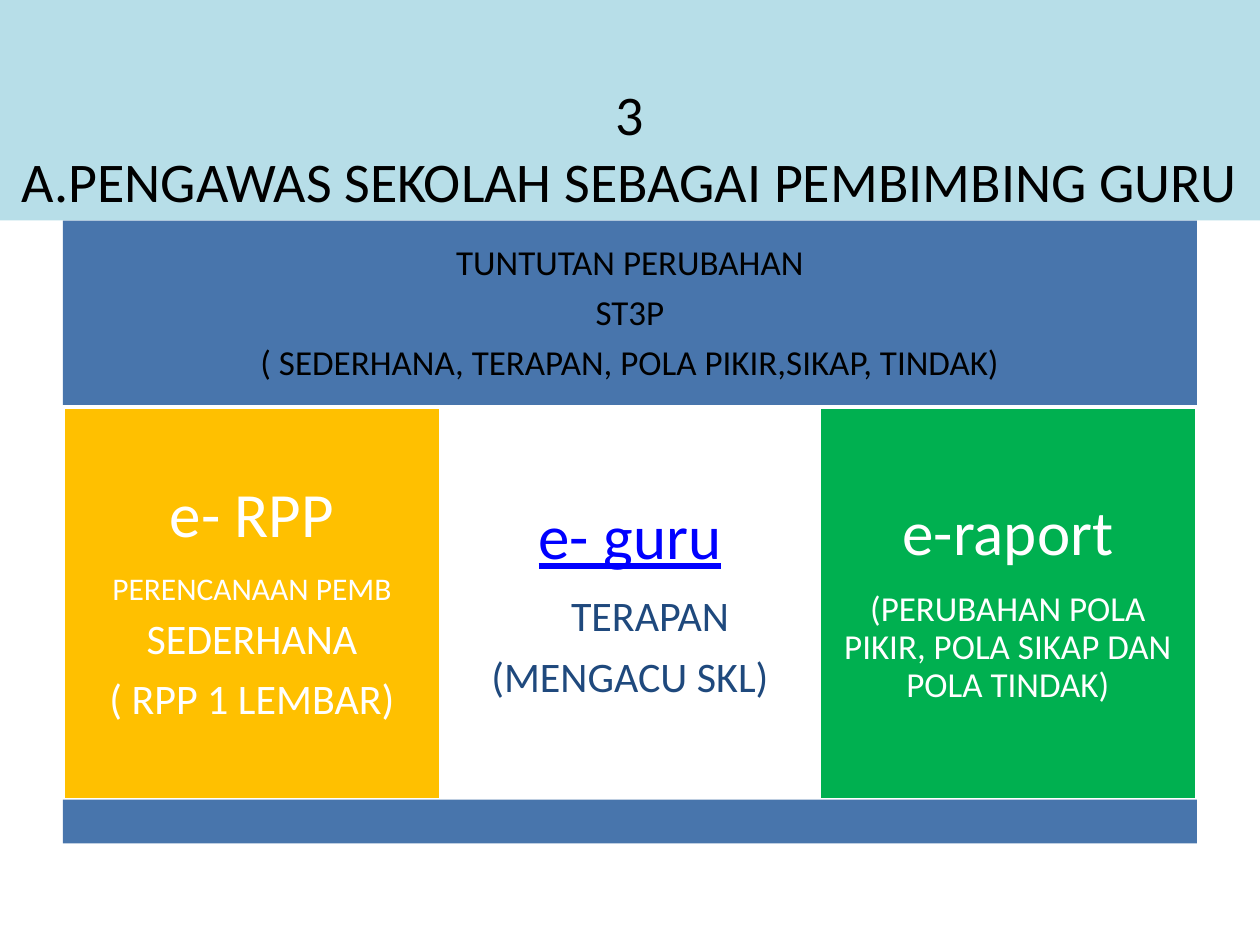
from dataclasses import dataclass

from pptx import Presentation
from pptx.dml.color import RGBColor
from pptx.enum import shapes, text
from pptx.util import Pt


@dataclass(frozen=True)
class Theme:
    font: str = "Calibri"
    black: str = "000000"
    white: str = "FFFFFF"
    sky: str = "B7DEE8"
    steel: str = "4875AC"
    amber: str = "FFC000"
    green: str = "00B050"
    navy: str = "1F497D"
    link: str = "0000FF"
    title: int = 32
    heading: int = 36
    large: int = 24
    body: int = 20
    small: int = 18


@dataclass(frozen=True)
class Line:
    wording: str
    size: int
    color: str
    underline: bool = False
    indent: float = 0


@dataclass(frozen=True)
class Box:
    left: float
    top: float
    width: float
    height: float

    def lengths(self):
        return [Pt(n) for n in (self.left, self.top, self.width, self.height)]


THEME = Theme()


def paint(fill, color):
    fill.solid()
    fill.fore_color.rgb = RGBColor.from_string(color)


def add_run(paragraph, line):
    run = paragraph.add_run()
    run.text = line.wording
    run.font.name = THEME.font
    run.font.size = Pt(line.size)
    run.font.color.rgb = RGBColor.from_string(line.color)
    run.font.underline = line.underline


def write_lines(frame, lines, inset):
    frame.word_wrap = True
    frame.vertical_anchor = text.MSO_ANCHOR.MIDDLE
    frame.margin_left = frame.margin_right = Pt(inset)
    frame.margin_top = frame.margin_bottom = Pt(inset)
    for index, line in enumerate(lines):
        paragraph = frame.add_paragraph() if index else frame.paragraphs[0]
        paragraph.alignment = text.PP_ALIGN.CENTER
        paragraph.line_spacing = 0.9
        paragraph.space_after = Pt(line.size * 0.35)
        if line.indent:
            paragraph._p.get_or_add_pPr().set("marL", str(Pt(line.indent)))
        add_run(paragraph, line)


def add_panel(slide, box, color, lines=(), inset=6, outlined=False):
    panel = slide.shapes.add_shape(
        shapes.MSO_SHAPE.RECTANGLE, *box.lengths())
    panel.shadow.inherit = False
    paint(panel.fill, color)
    if outlined:
        paint(panel.line.fill, THEME.white)
        panel.line.width = Pt(2)
    else:
        panel.line.fill.background()
    write_lines(panel.text_frame, lines, inset)


def add_title(slide, box):
    title = slide.shapes.title
    title.left, title.top, title.width, title.height = box.lengths()
    paint(title.fill, THEME.sky)
    frame = title.text_frame
    frame.auto_size = text.MSO_AUTO_SIZE.NONE
    frame.vertical_anchor = text.MSO_ANCHOR.BOTTOM
    paragraph = frame.paragraphs[0]
    paragraph.alignment = text.PP_ALIGN.CENTER
    add_run(paragraph, Line("3", THEME.title, THEME.black))
    paragraph.add_line_break()
    add_run(paragraph, Line("A.PENGAWAS SEKOLAH SEBAGAI PEMBIMBING GURU",
                            THEME.title, THEME.black))


def add_demands(slide, box):
    wordings = ("TUNTUTAN PERUBAHAN", "ST3P",
                "( SEDERHANA, TERAPAN, POLA PIKIR,SIKAP, TINDAK)")
    lines = [Line(wording, THEME.body, THEME.black) for wording in wordings]
    add_panel(slide, box, THEME.steel, lines)


def add_programs(slide, box):
    programs = [
        (THEME.amber, [
            Line("e- RPP", THEME.heading, THEME.white),
            Line("PERENCANAAN PEMB", THEME.small, THEME.white),
            Line("SEDERHANA", THEME.large, THEME.white),
            Line("( RPP 1 LEMBAR)", THEME.large, THEME.white),
        ]),
        (THEME.white, [
            Line("e- guru", THEME.heading, THEME.link, underline=True),
            Line("TERAPAN", THEME.large, THEME.navy, indent=23),
            Line("(MENGACU SKL)", THEME.large, THEME.navy),
        ]),
        (THEME.green, [
            Line("e-raport", THEME.heading, THEME.white),
            Line("(PERUBAHAN POLA PIKIR, POLA SIKAP DAN POLA TINDAK)",
                 THEME.body, THEME.white),
        ]),
    ]
    width = box.width / len(programs)
    for index, (color, lines) in enumerate(programs):
        column = Box(box.left + index * width, box.top, width, box.height)
        add_panel(slide, column, color, lines, inset=10.8, outlined=True)


def main():
    presentation = Presentation()
    presentation.slide_width, presentation.slide_height = Pt(720), Pt(540)
    slide = presentation.slides.add_slide(presentation.slide_layouts[5])
    paint(slide.background.fill, THEME.white)
    add_title(slide, Box(0, 0, 720, 126))
    add_demands(slide, Box(36, 126, 648, 106.5))
    add_programs(slide, Box(36, 232.5, 648, 224.5))
    add_panel(slide, Box(36, 457, 648, 25), THEME.steel)
    presentation.save("out.pptx")


if __name__ == "__main__":
    main()
